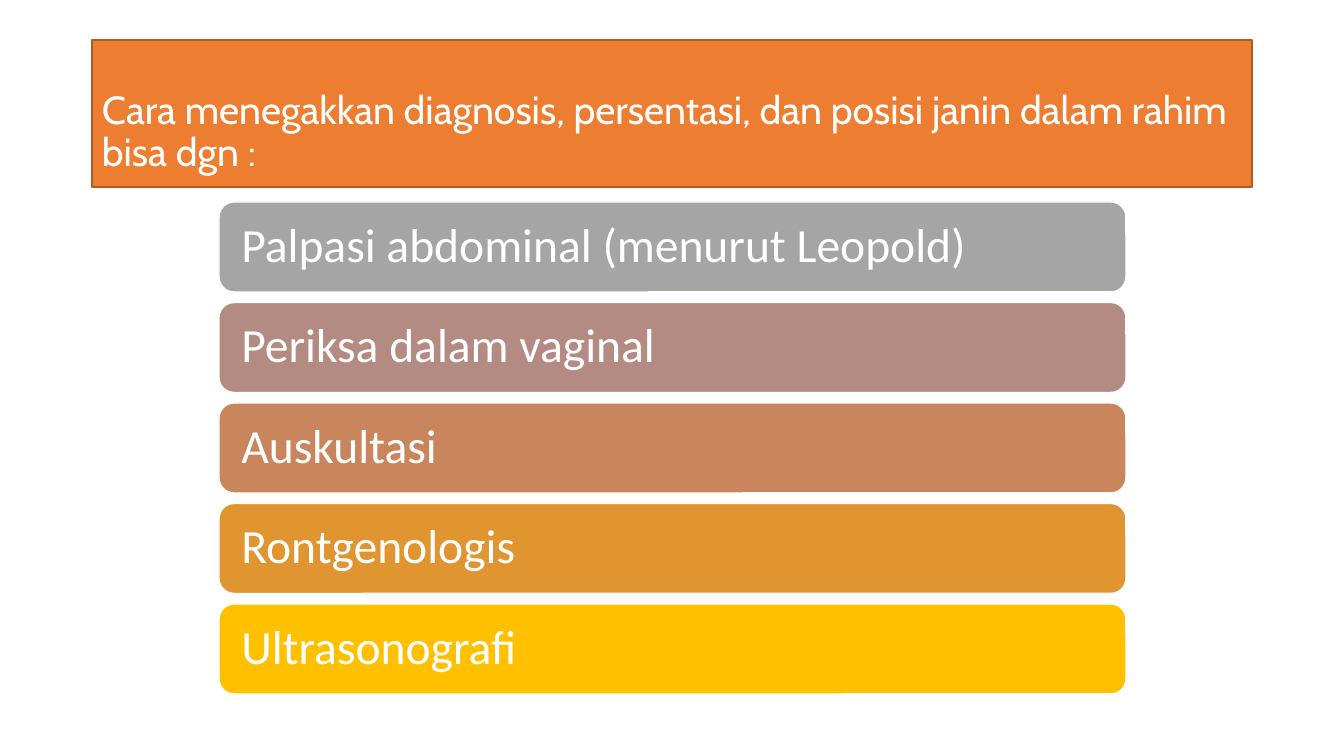
"""Build the slide listing the ways to diagnose the position of the fetus."""
from pptx import Presentation
from pptx.dml.color import RGBColor
from pptx.enum.shapes import MSO_SHAPE as Shape
from pptx.enum.text import MSO_ANCHOR as Anchor, PP_ALIGN as Align
from pptx.util import Emu, Pt

TITLE = "Cara menegakkan diagnosis, persentasi, dan posisi janin dalam rahim bisa dgn :"
METHODS = [
    ("Palpasi abdominal (menurut Leopold)", "gray"),
    ("Periksa dalam vaginal", "rose"),
    ("Auskultasi", "copper"),
    ("Rontgenologis", "amber"),
    ("Ultrasonografi", "yellow"),
]
COLORS = {
    "white": "FFFFFF",
    "orange": "ED7D31",
    "brown": "AF5C24",
    "gray": "A5A5A5",
    "rose": "B48B83",
    "copper": "C9855C",
    "amber": "E19530",
    "yellow": "FFC000",
}
SLIDE_SIZE = (1344, 756)
TITLE_BOX = (92, 40, 1160, 147)
TITLE_INSETS = (10, 43, 10, 5)
BAR_LEFT, BAR_WIDTH, BAR_HEIGHT = 219, 907, 90
FIRST_TOP, LAST_TOP = 202, 604
BAR_INSETS = (18, 18, 18, 18)


def px(length):
    return Emu(round(length * 12192000 / SLIDE_SIZE[0]))


def color(name):
    return RGBColor.from_string(COLORS[name])


def add_box(slide, kind, box, fill, line, text, font, size, insets):
    shape = slide.shapes.add_shape(kind, *map(px, box))
    shape.shadow.inherit = False
    shape.fill.solid()
    shape.fill.fore_color.rgb = color(fill)
    shape.line.color.rgb = color(line)
    shape.line.width = Pt(1)
    frame = shape.text_frame
    frame.word_wrap = True
    frame.vertical_anchor = Anchor.MIDDLE
    (frame.margin_left, frame.margin_top,
     frame.margin_right, frame.margin_bottom) = map(px, insets)
    frame.text = text
    paragraph = frame.paragraphs[0]
    paragraph.alignment = Align.LEFT
    paragraph.line_spacing = 0.9
    run_font = paragraph.runs[0].font
    run_font.name = font
    run_font.size = Pt(size)
    run_font.color.rgb = color("white")


def main():
    presentation = Presentation()
    presentation.slide_width, presentation.slide_height = map(px, SLIDE_SIZE)
    slide = presentation.slides.add_slide(presentation.slide_layouts[6])
    add_box(slide, Shape.RECTANGLE, TITLE_BOX, "orange", "brown",
            TITLE, "Cabin", 28, TITLE_INSETS)
    pitch = (LAST_TOP - FIRST_TOP) / (len(METHODS) - 1)
    for index, (method, fill) in enumerate(METHODS):
        box = (BAR_LEFT, FIRST_TOP + index * pitch, BAR_WIDTH, BAR_HEIGHT)
        add_box(slide, Shape.ROUNDED_RECTANGLE, box, fill, "white",
                method, "Calibri", 34, BAR_INSETS)
    presentation.save("out.pptx")


if __name__ == "__main__":
    main()
